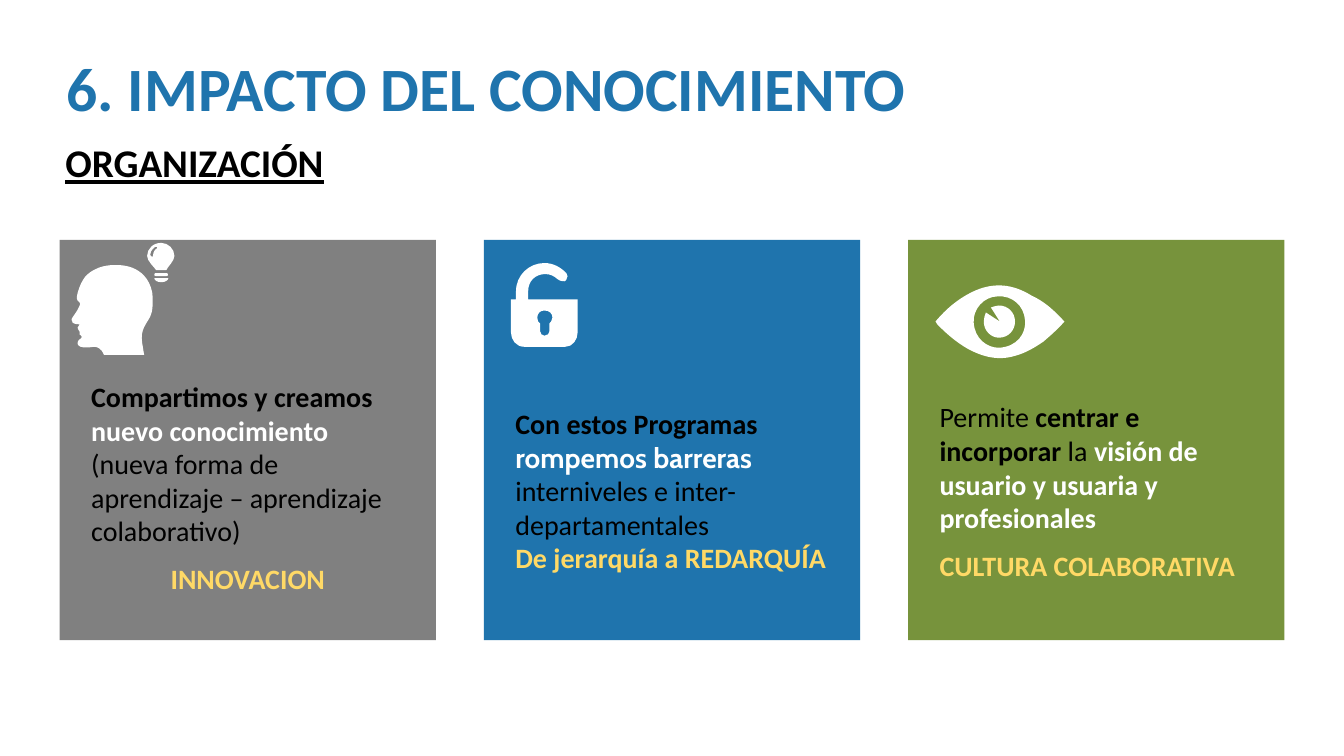
from pptx import Presentation
from pptx.dml.color import RGBColor
from pptx.enum.shapes import MSO_SHAPE
from pptx.enum.text import MSO_ANCHOR, PP_ALIGN
from pptx.oxml.ns import qn
from pptx.util import Pt

RECT, ROUND = MSO_SHAPE.RECTANGLE, MSO_SHAPE.ROUNDED_RECTANGLE
TOP, LEFT, CENTER = MSO_ANCHOR.TOP, PP_ALIGN.LEFT, PP_ALIGN.CENTER
BLUE = RGBColor(0x1F, 0x74, 0xAD)
GREEN = RGBColor(0x77, 0x93, 0x3C)
GRAY = RGBColor(0x80, 0x80, 0x80)
YELLOW = RGBColor(0xFF, 0xD9, 0x66)
WHITE = RGBColor(0xFF, 0xFF, 0xFF)
BLACK = RGBColor(0, 0, 0)

prs = Presentation()
prs.slide_width, prs.slide_height = Pt(960), Pt(540)
s = prs.slides.add_slide(prs.slide_layouts[6])


def paint(sp, color):
    sp.shadow.inherit = False
    sp.fill.solid()
    sp.fill.fore_color.rgb = color
    sp.line.fill.background()


def add_icon_part(*contours):
    """Draw closed contours as one white shape; inner contours are holes.

    A contour is a start, then segments: one point for a line, or two
    controls and an end for a cubic curve, as flat coordinates.
    """
    fb = s.shapes.build_freeform(*map(Pt, contours[0][0]))
    for i, (start, *segments) in enumerate(contours):
        if i:
            fb.move_to(*map(Pt, start))
        lengths = [Pt(v) for segment in segments for v in segment]
        fb.add_line_segments(list(zip(lengths[::2], lengths[1::2])), close=True)
    sp = fb.convert_to_shape()
    paint(sp, WHITE)
    lines = iter(list(sp._element.iter(qn("a:lnTo"))))
    for _, *segments in contours:
        for segment in segments:
            curve = next(lines)
            if len(segment) == 6:
                curve.tag = qn("a:cubicBezTo")
                for _ in range(2):
                    line = next(lines)
                    curve.append(line[0])
                    line.getparent().remove(line)


# Headings
headings = [
    ("6. IMPACTO DEL CONOCIMIENTO", 40.3, 32.4, 84, BLUE, {"size": Pt(44)}),
    ("ORGANIZACIÓN", 39.6, 95.5, 42.5, BLACK, {"size": Pt(28), "underline": True}),
]
for text, x, y, h, color, formats in headings:
    tf = s.shapes.add_textbox(Pt(x), Pt(y), Pt(877), Pt(h)).text_frame
    tf.word_wrap = True
    r = tf.paragraphs[0].add_run()
    r.text = text
    r.font.color.rgb = color
    for name, value in {"name": "Calibri", "bold": True, **formats}.items():
        setattr(r.font, name, value)

# Cards: fill, top inset, space after, paragraphs of (alignment, runs)
cards = [
    (GRAY, 99.6, 10, [
        (LEFT, [("Compartimos y creamos ", BLACK, True, "Calibri"),
                ("nuevo conocimiento ", WHITE, True, "Calibri"),
                ("(nueva forma de aprendizaje – aprendizaje colaborativo)",
                 BLACK, False, "Calibri")]),
        (CENTER, [("INNOVACION", YELLOW, True, "Calibri")]),
    ]),
    (BLUE, 118.9, 0, [
        (LEFT, [("Con estos Programas ", BLACK, True, "Calibri"),
                ("rompemos barreras ", WHITE, True, "Cabin"),
                ("interniveles e inter-departamentales", BLACK, False, "Calibri")]),
        (LEFT, [("De jerarquía a REDARQUÍA", YELLOW, True, "Calibri")]),
    ]),
    (GREEN, 114.2, 10, [
        (LEFT, [("Permite ", BLACK, False, "Calibri"),
                ("centrar e incorporar", BLACK, True, "Calibri"),
                (" la ", BLACK, False, "Calibri"),
                ("visión de usuario y usuaria y profesionales", WHITE, True, "Calibri")]),
        (LEFT, [("CULTURA COLABORATIVA", YELLOW, True, "Calibri")]),
    ]),
]
for column, (fill, inset, gap, paragraphs) in enumerate(cards):
    sp = s.shapes.add_shape(RECT, Pt(42.6 + 303 * column), Pt(171.4), Pt(268.8), Pt(285.8))
    paint(sp, fill)
    tf = sp.text_frame
    frame = {"word_wrap": True, "vertical_anchor": TOP, "margin_top": Pt(inset),
             "margin_left": Pt(22.5), "margin_right": Pt(22.5), "margin_bottom": Pt(0)}
    for name, value in frame.items():
        setattr(tf, name, value)
    for i, (align, runs) in enumerate(paragraphs):
        p = tf.add_paragraph() if i else tf.paragraphs[0]
        p.alignment = align
        p.space_after = Pt(gap)
        for text, color, bold, font in runs:
            r = p.add_run()
            r.text = text
            r.font.color.rgb = color
            for name, value in {"name": font, "size": Pt(20), "bold": bold}.items():
                setattr(r.font, name, value)

# Head with a light bulb
head = [
    (108.7, 208.8), (104.4, 187.9, 83.5, 189.4, 83.5, 189.4),
    (69.1, 188.6, 61.9, 196.6, 61.9, 196.6), (58.3, 199.4, 53.3, 212.4, 55.4, 214.6),
    (58.3, 216.7, 56.9, 218.2, 56.9, 218.2), (56.9, 218.2, 55.4, 221.8, 53.3, 224.6),
    (51.1, 227.5, 51.1, 228.2, 51.1, 228.2), (51.1, 232.6, 56.2, 231.1, 56.9, 231.8),
    (56.9, 232.6, 55.4, 233.3, 55.4, 234), (55.4, 235, 56.9, 236.9, 56.9, 236.9),
    (56.9, 239), (56.9, 239, 59.8, 240.5, 57.6, 241.9),
    (55.4, 242.6, 55.4, 245.5, 55.4, 245.5), (56.2, 249.8, 67, 247.7, 67, 247.7),
    (72.7, 247.7, 74.2, 253.4, 74.2, 253.4), (103, 253.4),
    (102.2, 249.8, 102.2, 247.7, 101.5, 244.8), (100.1, 235.4, 104.4, 231.8, 107.3, 226.1),
    (110.2, 220.3, 108.7, 208.8, 108.7, 208.8),
]
bulb = [
    (115.2, 173.5), (109.4, 173.5, 105.1, 177.8, 105.1, 182.9),
    (105.1, 186.5, 110.2, 190.8, 111.6, 193), (118.8, 193),
    (119.5, 190.8, 124.6, 186.5, 124.6, 182.9), (124.6, 177.8, 120.2, 173.5, 115.2, 173.5),
]
bulb_glint = [
    (111.6, 177.8), (111.6, 177.8, 109.4, 179.3, 109.4, 182.2),
    (109.4, 182.9, 108.7, 183.6, 108.7, 183.6), (108, 183.6, 107.3, 182.9, 107.3, 182.2),
    (107.3, 178.6, 110.9, 176.4, 110.9, 176.4), (110.9, 176.4, 111.6, 176.4, 112.3, 176.4),
    (112.3, 177.1, 112.3, 177.8, 111.6, 177.8),
]
bulb_tip = [(110.2, 198.7), (110.2, 200.2, 112.3, 201.6, 115.2, 201.6),
            (118, 201.6, 120.2, 200.2, 120.2, 198.7)]
add_icon_part(head)
add_icon_part(bulb, bulb_glint)
add_icon_part(bulb_tip)
bulb_base = s.shapes.add_shape(ROUND, Pt(110.2), Pt(195.1), Pt(9.8), Pt(2.1))
bulb_base.adjustments[0] = 0.5
paint(bulb_base, WHITE)

# Open padlock
padlock = [
    (377.3, 213.8), (377.3, 208.1), (377.3, 200.9, 382.3, 195.8, 389.5, 195.8),
    (393.1, 195.8, 396, 197.3, 398.2, 199.4), (399.6, 200.2, 400.3, 200.9, 401.8, 200.9),
    (403.9, 201.6, 405.4, 199.4, 405.4, 197.3), (405.4, 196.6, 404.6, 195.8, 404.6, 195.1),
    (400.3, 190.8, 395.3, 187.9, 388.8, 187.9), (378, 187.9, 368.6, 196.6, 368.6, 208.1),
    (368.6, 213.8), (365, 213.8), (365, 237.6), (365, 242.6, 368.6, 247.7, 374.4, 247.7),
    (403.9, 247.7), (409, 247.7, 412.6, 242.6, 412.6, 237.6), (412.6, 213.8),
]
keyhole = [
    (392.4, 231.1), (392.4, 236.9), (392.4, 238.3, 391, 239.8, 388.8, 239.8),
    (387.4, 239.8, 385.9, 238.3, 385.9, 236.9), (385.9, 231.1),
    (384.5, 230.4, 383.8, 229, 383.8, 226.8), (383.8, 223.9, 385.9, 221.8, 388.8, 221.8),
    (392.4, 221.8, 394.6, 223.9, 394.6, 226.8), (394.6, 229, 393.1, 230.4, 392.4, 231.1),
]
add_icon_part(padlock, keyhole)

# Eye
eye = [
    (736.6, 211), (723.6, 203, 710.6, 201.6, 697, 207.4),
    (685.5, 212.4, 676, 220.3, 668.2, 229.7), (668.9, 230.4, 668.9, 231.1, 669.6, 231.8),
    (676, 238.3, 682.6, 244.1, 691.2, 249.1), (702, 254.9, 712.8, 257.8, 725, 254.2),
    (733, 252, 738.7, 248.4, 745.2, 244.1), (750.2, 239.8, 755.3, 235.4, 760.3, 229.7),
    (753.1, 221.8, 746, 215.3, 736.6, 211),
]
iris = [
    (713.5, 248.4), (704.9, 248.4, 696.2, 241.9, 695.5, 230.4),
    (694.8, 221, 702.7, 211.7, 712.8, 211.7), (722.9, 211, 731.5, 218.2, 732.2, 229),
    (733, 238.3, 726.5, 247.7, 713.5, 248.4),
]
pupil = [
    (713.5, 218.2), (712.1, 218.2, 709.9, 218.9, 707.8, 219.6), (714.2, 229.7),
    (704.2, 223.2), (703.4, 225.4, 702.7, 227.5, 702.7, 229.7),
    (702.7, 236.2, 707.8, 241.2, 713.5, 241.2), (720, 241.2, 725, 236.2, 725, 229.7),
    (725, 223.2, 720, 218.2, 713.5, 218.2),
]
add_icon_part(eye, iris)
add_icon_part(pupil)

prs.save("out.pptx")
